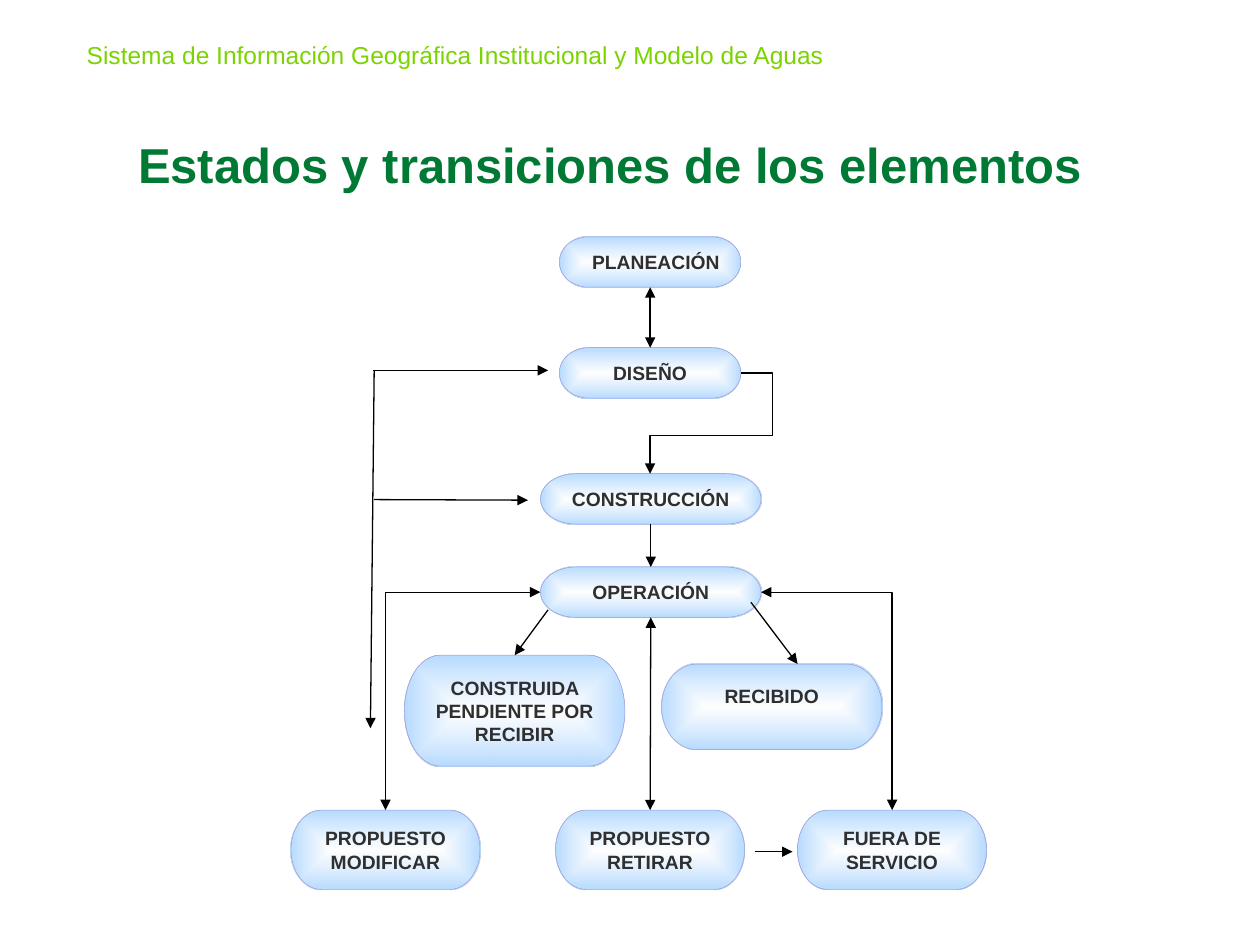
from lxml import etree
from pptx import Presentation
from pptx.dml.color import RGBColor
from pptx.enum.shapes import MSO_CONNECTOR, MSO_SHAPE
from pptx.enum.text import MSO_ANCHOR, PP_ALIGN
from pptx.oxml import parse_xml
from pptx.oxml.ns import nsdecls, qn
from pptx.util import Inches, Pt

TERMINATOR = MSO_SHAPE.FLOWCHART_TERMINATOR
STRAIGHT, ELBOW = MSO_CONNECTOR.STRAIGHT, MSO_CONNECTOR.ELBOW
LEFT, CENTER, RIGHT = PP_ALIGN.LEFT, PP_ALIGN.CENTER, PP_ALIGN.RIGHT
MIDDLE, BOTTOM = MSO_ANCHOR.MIDDLE, MSO_ANCHOR.BOTTOM
TOP_SIDE, BOTTOM_SIDE = 0, 2

COLUMNS, ROWS = 100, 75
CELL = Inches(0.1)
FONT = "Arial"
COLORS = {
    "header": "7AD400",
    "title": "007934",
    "label": "2F2F2F",
    "outline": "9494DC",
    "arrow": "000000",
    "glow": "FFFFFF",
    "edge": "99CCFF",
}

STATES = {
    "planning": ("PLANEACIÓN", 44.4, 18.8, 14.4, 4),
    "design": ("DISEÑO", 44.4, 27.6, 14.4, 4),
    "construction": ("CONSTRUCCIÓN", 42.9, 37.6, 17.5, 4),
    "operation": ("OPERACIÓN", 42.9, 45, 17.5, 4),
    "modify": ("PROPUESTO\nMODIFICAR", 23.1, 64.3, 15, 6.3),
    "withdraw": ("PROPUESTO\nRETIRAR", 44.1, 64.3, 15, 6.3),
    "out_of_service": ("FUERA DE\nSERVICIO", 63.3, 64.3, 15, 6.3),
    "received": ("RECIBIDO", 52.5, 52.7, 17.5, 6.8),
    "pending": ("CONSTRUIDA PENDIENTE POR RECIBIR", 32.1, 52, 17.5, 8.8),
}

VERTICAL_LINKS = [
    ("planning", "design", True),
    ("construction", "operation", False),
    ("operation", "withdraw", True),
]

FREE_ARROWS = [
    ((59.9, 67.6), (62.9, 67.6)),
    ((29.7, 29.4), (29.4, 57.8)),
    ((29.6, 29.4), (43.5, 29.4)),
    ((29.7, 39.65), (41.9, 39.7)),
    ((59.6, 47.8), (63.3, 52.7)),
]


def grid(value):
    return round(value * CELL)


def color(name):
    return RGBColor.from_string(COLORS[name])


def write_text(shape, text, size, color_name, alignment, anchor, bold):
    text_frame = shape.text_frame
    text_frame.word_wrap = True
    text_frame.vertical_anchor = anchor
    text_frame.text = text
    for paragraph in text_frame.paragraphs:
        paragraph.alignment = alignment
        for run in paragraph.runs:
            run.font.name = FONT
            run.font.size = Pt(size)
            run.font.bold = bold
            run.font.color.rgb = color(color_name)


def add_heading(slide, text, top, height, size, color_name, alignment, bold):
    box = slide.shapes.add_textbox(grid(5.9), grid(top), grid(85), grid(height))
    write_text(box, text, size, color_name, alignment, BOTTOM, bold)


def glow_fill():
    stops = "".join(
        f'<a:gs pos="{position}"><a:srgbClr val="{COLORS[name]}">'
        f'<a:alpha val="{alpha}"/></a:srgbClr></a:gs>'
        for position, name, alpha in ((0, "glow", 60000), (100000, "edge", 71000))
    )
    return parse_xml(
        f'<a:gradFill {nsdecls("a")} rotWithShape="1"><a:gsLst>{stops}</a:gsLst>'
        '<a:path path="shape"><a:fillToRect l="50000" t="50000" r="50000" b="50000"/>'
        "</a:path></a:gradFill>"
    )


def add_state(slide, text, left, top, width, height, alignment=CENTER):
    shape = slide.shapes.add_shape(
        TERMINATOR, grid(left), grid(top), grid(width), grid(height)
    )
    shape.shadow.inherit = False
    shape._element.spPr.find(qn("a:prstGeom")).addnext(glow_fill())
    shape.line.color.rgb = color("outline")
    shape.line.width = Pt(0.25)
    write_text(shape, text, 11, "label", alignment, MIDDLE, True)
    return shape


def add_arrow(slide, start, end, two_way=False, kind=STRAIGHT):
    connector = slide.shapes.add_connector(kind, *map(grid, start + end))
    connector.line.color.rgb = color("arrow")
    connector.line.width = Pt(0.75)
    line = connector.line._get_or_add_ln()
    for tag in ("a:headEnd", "a:tailEnd") if two_way else ("a:tailEnd",):
        etree.SubElement(line, qn(tag), type="triangle")
    etree.SubElement(connector._element.spPr, qn("a:effectLst"))
    return connector


def add_elbow(slide, start, end, preset, adjustments=(), two_way=False):
    connector = add_arrow(slide, start, end, two_way, ELBOW)
    geometry = connector._element.spPr.find(qn("a:prstGeom"))
    geometry.set("prst", preset)
    guides = geometry.get_or_add_avLst()
    for number, share in enumerate(adjustments, 1):
        etree.SubElement(
            guides, qn("a:gd"), name=f"adj{number}", fmla=f"val {round(share * 100000)}"
        )


def add_transitions(slide, states):
    for source, target, two_way in VERTICAL_LINKS:
        connector = add_arrow(slide, (0, 0), (0, 0), two_way)
        connector.begin_connect(states[source], BOTTOM_SIDE)
        connector.end_connect(states[target], TOP_SIDE)
    for start, end in FREE_ARROWS:
        add_arrow(slide, start, end)
    pending_arrow = add_arrow(slide, (43.5, 48.4), (40.9, 52))
    pending_arrow.end_connect(states["pending"], TOP_SIDE)
    add_elbow(slide, (58.8, 29.6), (51.6, 37.6), "bentConnector4", (-0.35, 0.62))
    for start, end in (((42.9, 47), (30.6, 64.3)), ((60.4, 47), (70.8, 64.3))):
        add_elbow(slide, start, end, "bentConnector2", two_way=True)


def main():
    presentation = Presentation()
    presentation.slide_width = grid(COLUMNS)
    presentation.slide_height = grid(ROWS)
    slide = presentation.slides.add_slide(presentation.slide_layouts[6])
    add_heading(
        slide,
        "Sistema de Información Geográfica Institucional y Modelo de Aguas",
        2.9, 3.1, 14, "header", LEFT, False,
    )
    add_heading(
        slide,
        "Estados y transiciones de los elementos",
        9.3, 6.5, 28, "title", CENTER, True,
    )
    states = {name: add_state(slide, *values) for name, values in STATES.items()}
    states["planning"].text_frame.paragraphs[0].alignment = RIGHT
    states["received"].text_frame.margin_bottom = grid(2.3)
    add_transitions(slide, states)
    presentation.save("out.pptx")


if __name__ == "__main__":
    main()
